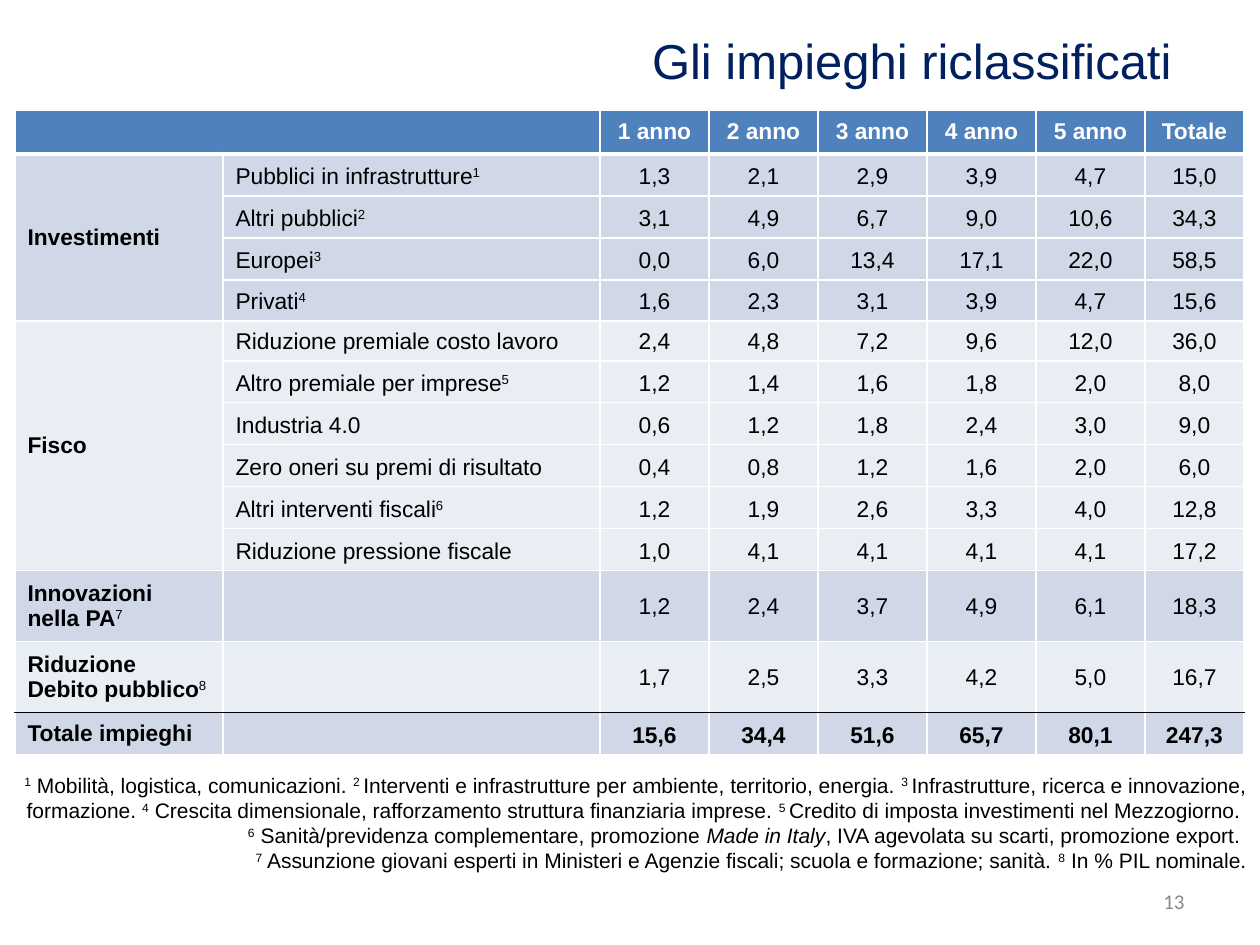
from lxml import etree
from pptx import Presentation
from pptx.dml.color import RGBColor
from pptx.enum.text import MSO_ANCHOR, MSO_AUTO_SIZE, PP_ALIGN
from pptx.oxml.ns import qn
from pptx.util import Pt

PX = 914400 / 126
NAVY = RGBColor(0x00, 0x20, 0x60)
BLUE = RGBColor(0x4F, 0x81, 0xBD)
BAND_DARK = RGBColor(0xD0, 0xD8, 0xE8)
BAND_LIGHT = RGBColor(0xE9, 0xED, 0xF4)
GREY = RGBColor(0x89, 0x89, 0x89)
WHITE = RGBColor(0xFF, 0xFF, 0xFF)
BLACK = RGBColor(0x00, 0x00, 0x00)

# Content: ^...^ marks superscript, _..._ marks italics
TITLE = "Gli impieghi riclassificati"
PAGE_NUMBER = "13"
HEADER = ["1 anno", "2 anno", "3 anno", "4 anno", "5 anno", "Totale"]
GROUPS = [
    ("Investimenti", [
        ("Pubblici in infrastrutture^1^", "1,3 2,1 2,9 3,9 4,7 15,0"),
        ("Altri pubblici^2^", "3,1 4,9 6,7 9,0 10,6 34,3"),
        ("Europei^3^", "0,0 6,0 13,4 17,1 22,0 58,5"),
        ("Privati^4^", "1,6 2,3 3,1 3,9 4,7 15,6"),
    ]),
    ("Fisco", [
        ("Riduzione premiale costo lavoro", "2,4 4,8 7,2 9,6 12,0 36,0"),
        ("Altro premiale per imprese^5^", "1,2 1,4 1,6 1,8 2,0 8,0"),
        ("Industria 4.0", "0,6 1,2 1,8 2,4 3,0 9,0"),
        ("Zero oneri su premi di risultato", "0,4 0,8 1,2 1,6 2,0 6,0"),
        ("Altri interventi fiscali^6^", "1,2 1,9 2,6 3,3 4,0 12,8"),
        ("Riduzione pressione fiscale", "1,0 4,1 4,1 4,1 4,1 17,2"),
    ]),
    ("Innovazioni\nnella PA^7^", [("", "1,2 2,4 3,7 4,9 6,1 18,3")]),
    ("Riduzione Debito pubblico^8^", [("", "1,7 2,5 3,3 4,2 5,0 16,7")]),
    ("Totale impieghi", [("", "15,6 34,4 51,6 65,7 80,1 247,3")]),
]
NOTES = [
    "^1^ Mobilità, logistica, comunicazioni. "
    "^2 ^Interventi e infrastrutture per ambiente, territorio, energia. "
    "^3 ^Infrastrutture, ricerca e innovazione, formazione. "
    "^4^ Crescita dimensionale, rafforzamento struttura finanziaria imprese. "
    "^5 ^Credito di imposta investimenti nel Mezzogiorno. ",
    "^6^ Sanità/previdenza complementare, promozione _Made in Italy_, "
    "IVA agevolata su scarti, promozione export. ",
    "^7^ Assunzione giovani esperti in Ministeri e Agenzie fiscali; "
    "scuola e formazione; sanità. ^8^ In % PIL nominale.",
]
COLUMN_WIDTHS = [208, 377] + [109] * 5 + [99]
ROW_HEIGHTS = [44, 42, 42, 42, 41, 40] + [42] * 5 + [71, 71, 42]


def px(value):
    return round(value * PX)


def place(shape, left, top, width, height):
    shape.left, shape.top = px(left), px(top)
    shape.width, shape.height = px(width), px(height)


def write(text_frame, lines, size, color, align, bold=False, font_name="Arial"):
    for index, line in enumerate(lines):
        paragraph = text_frame.paragraphs[0] if index == 0 else text_frame.add_paragraph()
        paragraph.alignment = align
        for raised_index, part in enumerate(line.split("^")):
            raised = raised_index % 2 == 1
            for italic_index, text in enumerate(part.split("_")):
                if not text:
                    continue
                run = paragraph.add_run()
                run.text = text
                font = run.font
                font.name, font.size = font_name, Pt(size)
                font.bold = bold and not raised
                font.italic = italic_index % 2 == 1
                font.color.rgb = color
                if raised:
                    font._element.set("baseline", "30000")
        if not line:  # keeps an empty cell as low as its row
            etree.SubElement(paragraph._p, qn("a:endParaRPr"), sz=str(size * 100))


def set_borders(cell, top=WHITE, bottom=WHITE, bottom_width=1):
    properties = cell._tc.get_or_add_tcPr()
    for side, color, width in (("L", WHITE, 1), ("R", WHITE, 1),
                               ("T", top, 1), ("B", bottom, bottom_width)):
        line = etree.SubElement(properties, qn(f"a:ln{side}"), w=str(Pt(width)))
        fill = etree.SubElement(line, qn("a:solidFill"))
        etree.SubElement(fill, qn("a:srgbClr"), val=str(color))


def fill_cell(cell, text, fill, color=BLACK, align=PP_ALIGN.CENTER, bold=False,
              anchor=MSO_ANCHOR.MIDDLE, **borders):
    set_borders(cell, **borders)
    cell.fill.solid()
    cell.fill.fore_color.rgb = fill
    cell.vertical_anchor = anchor
    write(cell.text_frame, text.split("\n"), 13, color, align, bold)


presentation = Presentation()
presentation.slide_width, presentation.slide_height = px(1260), px(945)
slide = presentation.slides.add_slide(presentation.slide_layouts[5])

# Title
title = slide.shapes.title
place(title, 84, 24, 1100, 72)
title.text_frame.vertical_anchor = MSO_ANCHOR.TOP
title.text_frame.auto_size = MSO_AUTO_SIZE.SHAPE_TO_FIT_TEXT
write(title.text_frame, [TITLE], 28, NAVY, PP_ALIGN.RIGHT)

# Page number and footnotes
page_box = slide.shapes.add_textbox(px(903), px(876), px(294), px(50))
page_box.text_frame.word_wrap = True
page_box.text_frame.vertical_anchor = MSO_ANCHOR.MIDDLE
write(page_box.text_frame, [PAGE_NUMBER], 12, GREY, PP_ALIGN.RIGHT, font_name="Calibri")

notes_box = slide.shapes.add_textbox(0, px(766), px(1259), px(115))
notes_box.text_frame.word_wrap = True
notes_box.text_frame.auto_size = MSO_AUTO_SIZE.SHAPE_TO_FIT_TEXT
write(notes_box.text_frame, NOTES, 12, BLACK, PP_ALIGN.RIGHT)

# Table grid
table = slide.shapes.add_table(
    len(ROW_HEIGHTS), len(COLUMN_WIDTHS), px(15), px(110),
    px(sum(COLUMN_WIDTHS)), px(sum(ROW_HEIGHTS))).table
for column, width in zip(table.columns, COLUMN_WIDTHS):
    column.width = px(width)
for row, height in zip(table.rows, ROW_HEIGHTS):
    row.height = px(height)

# Header row
for column_index, text in enumerate(["", ""] + HEADER):
    fill_cell(table.cell(0, column_index), text, BLUE, WHITE, bold=True, bottom_width=3)
table.cell(0, 0).merge(table.cell(0, 1))

# Groups in alternating bands, with a black rule above the total
row_index = 1
last_group = len(GROUPS) - 1
for group_index, (group, items) in enumerate(GROUPS):
    band = BAND_LIGHT if group_index % 2 else BAND_DARK
    is_total = group_index == last_group
    borders = {"top": BLACK if is_total else WHITE,
               "bottom": BLACK if group_index == last_group - 1 else WHITE}
    first_row = row_index
    anchor = MSO_ANCHOR.BOTTOM if len(items) > 1 or is_total else MSO_ANCHOR.MIDDLE
    for item, values in items:
        name = group if row_index == first_row else ""
        fill_cell(table.cell(row_index, 0), name, band, align=PP_ALIGN.LEFT,
                  bold=True, **borders)
        fill_cell(table.cell(row_index, 1), item, band, align=PP_ALIGN.LEFT,
                  anchor=anchor, **borders)
        for column_index, value in enumerate(values.split(), start=2):
            fill_cell(table.cell(row_index, column_index), value, band,
                      bold=is_total, anchor=anchor, **borders)
        row_index += 1
    if len(items) > 1:
        table.cell(first_row, 0).merge(table.cell(row_index - 1, 0))

presentation.save("out.pptx")
